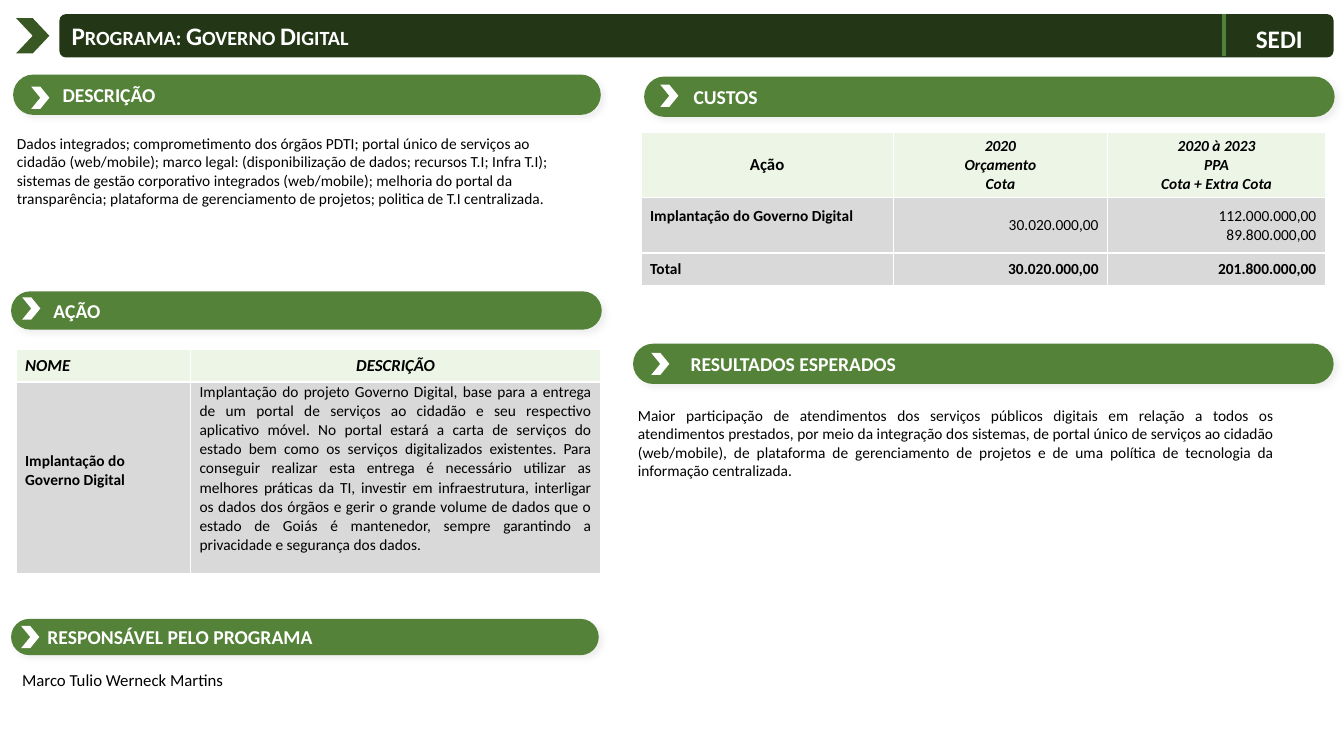
import pptx
import pptx.dml.color
import pptx.enum.shapes
import pptx.enum.text
import pptx.oxml
import pptx.oxml.ns
import pptx.util

SHAPE = pptx.enum.shapes.MSO_SHAPE
ALIGN = pptx.enum.text.PP_ALIGN
ANCHOR = pptx.enum.text.MSO_ANCHOR
FIT = pptx.enum.text.MSO_AUTO_SIZE
COLUMNS, ROWS = 133.33, 75
GREEN, DARK_GREEN, ARROW_GREEN = "548238", "233616", "385723"
PALE_GREEN, GRAY, WHITE, BLACK = "EDF5E7", "D9D9D9", "FFFFFF", "000000"
NAMESPACE = pptx.oxml.ns.nsdecls("a")


def color(value):
    return pptx.dml.color.RGBColor.from_string(value)


class Board:
    """Style and current slide; lengths are columns and rows of a 0.1-inch grid."""

    def __init__(self, presentation):
        self.slide = presentation.slides.add_slide(presentation.slide_layouts[5])
        self.shapes = self.slide.shapes
        self.column = presentation.slide_width / COLUMNS
        self.row = presentation.slide_height / ROWS

    def across(self, columns):
        return pptx.util.Emu(round(columns * self.column))

    def down(self, rows):
        return pptx.util.Emu(round(rows * self.row))

    def box(self, left, top, width, height):
        return self.across(left), self.down(top), self.across(width), self.down(height)

    def fill_text(self, frame, text, size, ink=BLACK, align=ALIGN.LEFT, spacing=None, **formats):
        """Put each line of text in its own paragraph; formats are font attributes."""
        formats = {"name": "Calibri", "size": pptx.util.Pt(size), "bold": False, **formats}
        for index, line in enumerate(text.split("\n")):
            paragraph = frame.add_paragraph() if index else frame.paragraphs[0]
            paragraph.alignment = align
            paragraph.line_spacing = spacing
            run = paragraph.add_run()
            run.text = line
            run.font.color.rgb = color(ink)
            for attribute, value in formats.items():
                setattr(run.font, attribute, value)

    def shape(self, kind, box, fill, adjustment=0.5):
        shape = self.shapes.add_shape(kind, *self.box(*box))
        shape.adjustments[0] = adjustment
        shape.shadow.inherit = False
        shape.fill.solid()
        shape.fill.fore_color.rgb = color(fill)
        shape.line.fill.background()
        return shape

    def section(self, label, box, label_left, arrow):
        """Pill heading whose label starts at column label_left."""
        left, _, _, height = box
        pill = self.shape(SHAPE.ROUNDED_RECTANGLE, box, GREEN)
        effects = pill.element.spPr.find(pptx.oxml.ns.qn("a:effectLst"))
        effects.append(pptx.oxml.parse_xml(
            f'<a:outerShdw {NAMESPACE} blurRad="50800" dist="38100" dir="2700000" algn="tl" '
            f'rotWithShape="0"><a:srgbClr val="{GRAY}"><a:alpha val="40000"/></a:srgbClr>'
            '</a:outerShdw>'))
        frame = pill.text_frame
        frame.vertical_anchor = ANCHOR.MIDDLE
        frame.word_wrap = True
        corner_inset = 0.29 * height / 2
        frame.margin_left = self.across(label_left - left - corner_inset)
        frame.margin_top = frame.margin_bottom = self.down(0.4)
        self.fill_text(frame, label, 14, WHITE, bold=True)
        self.shape(SHAPE.CHEVRON, (*arrow, 1.8, 2.2), WHITE)

    def title(self, text, box):
        title = self.shapes.title
        self.shapes.element.append(title.element)
        title.left, title.top, title.width, title.height = self.box(*box)
        frame = title.text_frame
        frame.auto_size = FIT.NONE
        frame.vertical_anchor = ANCHOR.MIDDLE
        self.fill_text(frame, text, 18, WHITE, bold=True)
        frame.paragraphs[0].runs[0].font._element.set("cap", "small")

    def text(self, text, box, size, wrap=True, **style):
        frame = self.shapes.add_textbox(*self.box(*box)).text_frame
        frame.word_wrap = wrap
        frame.auto_size = FIT.SHAPE_TO_FIT_TEXT
        self.fill_text(frame, text, size, **style)

    def line(self, left, top, bottom, ink, width):
        line = self.shapes.add_connector(
            pptx.enum.shapes.MSO_CONNECTOR.STRAIGHT, self.across(left), self.down(top),
            self.across(left), self.down(bottom))
        line.line.color.rgb = color(ink)
        line.line.width = pptx.util.Pt(width)
        line._element.spPr.append(pptx.oxml.parse_xml(f"<a:effectLst {NAMESPACE}/>"))

    def table(self, left, top, widths, heights, rows):
        """Each cell is (text, style, rows of space below)."""
        table = self.shapes.add_table(
            len(rows), len(widths), *self.box(left, top, sum(widths), sum(heights))).table
        table.first_row = table.horz_banding = False
        for column, width in zip(table.columns, widths):
            column.width = self.across(width)
        for index, (row, height, contents) in enumerate(zip(table.rows, heights, rows)):
            row.height = self.down(height)
            for cell, (text, style, below) in zip(row.cells, contents):
                margin = 0 if index else 0.5
                cell.margin_left = cell.margin_right = self.across(0.9)
                cell.margin_top = self.down(margin)
                cell.margin_bottom = self.down(margin + below)
                cell.vertical_anchor = ANCHOR.MIDDLE
                self.fill_text(cell.text_frame, text, **style)
                properties = cell._tc.get_or_add_tcPr()
                for side in ("lnL", "lnR", "lnT", "lnB"):
                    properties.append(pptx.oxml.parse_xml(
                        f'<a:{side} {NAMESPACE} w="12700"><a:solidFill>'
                        f'<a:srgbClr val="{WHITE}"/></a:solidFill></a:{side}>'))
                cell.fill.solid()
                cell.fill.fore_color.rgb = color(GRAY if index else PALE_GREEN)


def main():
    presentation = pptx.Presentation()
    presentation.slide_width = pptx.util.Inches(13.33)
    presentation.slide_height = pptx.util.Inches(7.5)
    board = Board(presentation)

    board.shape(SHAPE.CHEVRON, (1.6, 1.8, 3.3, 3.5), ARROW_GREEN)
    board.shape(SHAPE.ROUNDED_RECTANGLE, (5.9, 1.4, 126.4, 4.3), DARK_GREEN, 0.15)
    board.title("Programa: Governo Digital", (6.1, 1.4, 110, 4.3))
    board.line(121.4, 1.4, 5.6, GREEN, 3)
    board.text("SEDI", (123.6, 1.8, 6.7, 4), 18, wrap=False, ink=WHITE, bold=True)

    for label, box, label_left, arrow in (
            ("DESCRIÇÃO", (1.3, 7.4, 58.3, 4), 6.2, (3.1, 8.6)),
            ("AÇÃO", (1.1, 28.9, 58.6, 3.8), 5.3, (2.2, 29.5)),
            ("RESPONSÁVEL PELO PROGRAMA", (1.1, 61.4, 58.3, 3.6), 4.7, (2.1, 62.1)),
            ("CUSTOS", (63.9, 7.6, 68.5, 4), 68.8, (65.5, 8.4)),
            ("RESULTADOS ESPERADOS", (62.8, 34.1, 69.5, 4), 68.5, (64.6, 35))):
        board.section(label, box, label_left, arrow)

    board.text(
        "Dados integrados; comprometimento dos órgãos PDTI; portal único de serviços ao cidadão "
        "(web/mobile); marco legal: (disponibilização de dados; recursos T.I; Infra T.I); sistemas "
        "de gestão corporativo integrados (web/mobile); melhoria do portal da transparência; "
        "plataforma de gerenciamento de projetos; politica de T.I centralizada.",
        (0.7, 12.8, 55.8, 8.4), 11)
    board.text(
        "Maior participação de atendimentos dos serviços públicos digitais em relação a todos os "
        "atendimentos prestados, por meio da integração dos sistemas, de portal único de serviços "
        "ao cidadão (web/mobile), de plataforma de gerenciamento de projetos e de uma política de "
        "tecnologia da informação centralizada.",
        (62.3, 39.8, 65.1, 8.4), 11, align=ALIGN.JUSTIFY)
    board.text("Marco Tulio Werneck Martins", (1.2, 65.7, 58, 3.4), 12, spacing=1.14)

    head = {"size": 12, "bold": True}
    centered = {"size": 11, "bold": True, "italic": True, "align": ALIGN.CENTER}
    strong = {"size": 11, "bold": True}
    amount = {"size": 11, "align": ALIGN.RIGHT}
    total = {**amount, "bold": True}
    board.table(1.6, 34.7, (17.3, 40.7), (3.2, 19), (
        (("NOME", {**head, "italic": True}, 0), ("DESCRIÇÃO", {**centered, "size": 12}, 0)),
        (("Implantação do Governo Digital", strong, 1.4),
         ("Implantação do projeto Governo Digital, base para a entrega de um portal de serviços ao "
          "cidadão e seu respectivo aplicativo móvel. No portal estará a carta de serviços do "
          "estado bem como os serviços digitalizados existentes. Para conseguir realizar esta "
          "entrega é necessário utilizar as melhores práticas da TI, investir em infraestrutura, "
          "interligar os dados dos órgãos e gerir o grande volume de dados que o estado de Goiás é "
          "mantenedor, sempre garantindo a privacidade e segurança dos dados.",
          {"size": 11, "align": ALIGN.JUSTIFY}, 1.8))))
    board.table(63.6, 13.1, (25, 21.3, 21.6), (6.5, 5.5, 3.2), (
        (("Ação", {**head, "align": ALIGN.CENTER}, 0), ("2020\nOrçamento\nCota", centered, 0),
         ("2020 à 2023\nPPA\nCota + Extra Cota", centered, 0)),
        (("Implantação do Governo Digital", {**strong, "align": ALIGN.JUSTIFY}, 1.9),
         ("30.020.000,00", amount, 0), ("112.000.000,00\n89.800.000,00", amount, 0)),
        (("Total", strong, 0), ("30.020.000,00", total, 0), ("201.800.000,00", total, 0))))

    presentation.save("out.pptx")


if __name__ == "__main__":
    main()
